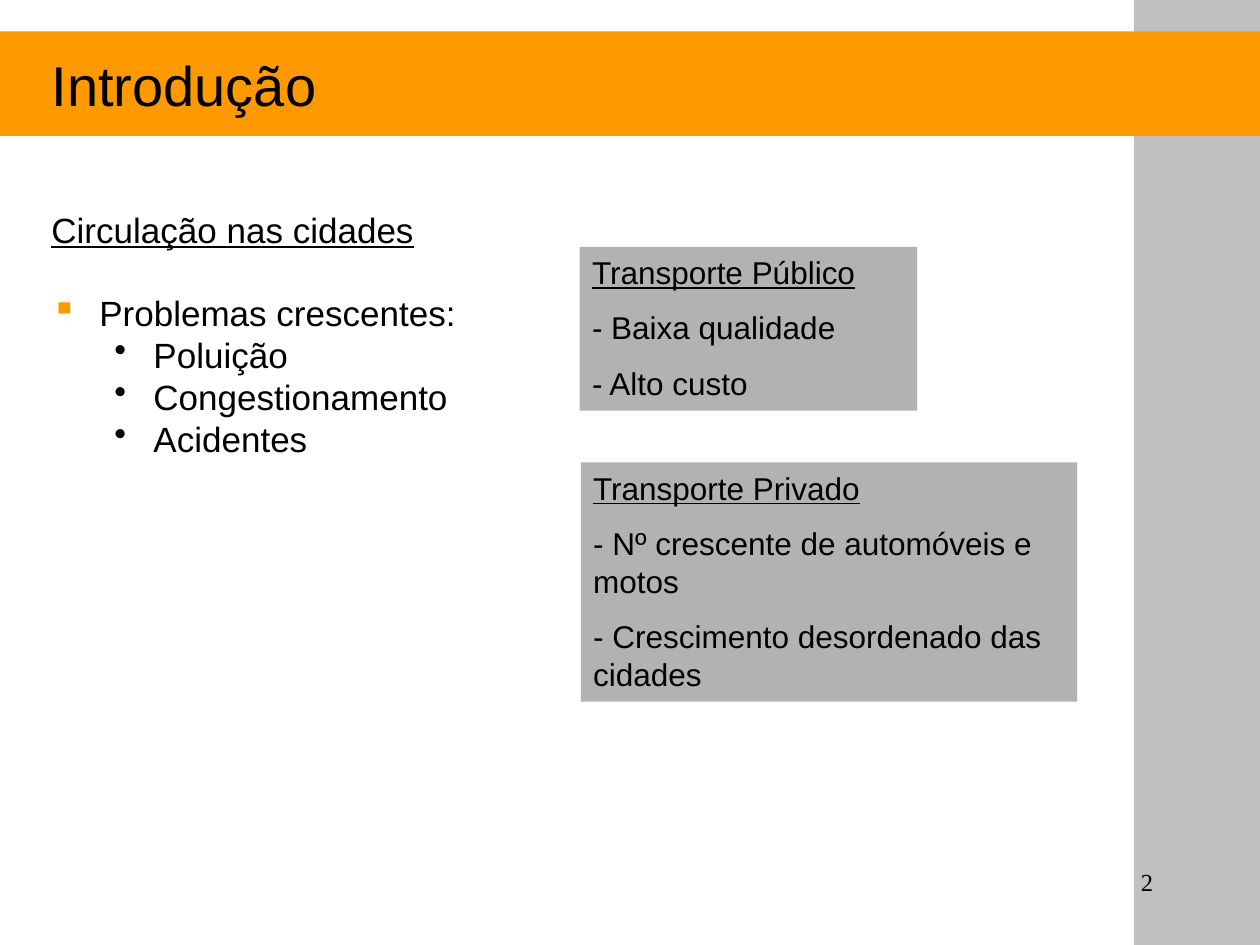
from dataclasses import dataclass

from lxml import etree
from pptx import Presentation
from pptx.dml.color import RGBColor
from pptx.enum.shapes import MSO_SHAPE
from pptx.enum.text import MSO_ANCHOR, PP_ALIGN
from pptx.oxml.ns import qn
from pptx.util import Inches, Pt

RECTANGLE = MSO_SHAPE.RECTANGLE
TOP, MIDDLE = MSO_ANCHOR.TOP, MSO_ANCHOR.MIDDLE
LEFT, RIGHT = PP_ALIGN.LEFT, PP_ALIGN.RIGHT
TITLE_ONLY = 5


@dataclass(frozen=True)
class Theme:
    black: str = "000000"
    orange: str = "FF9900"
    sidebar: str = "C0C0C0"
    panel: str = "B2B2B2"
    font: str = "Arial"
    number_font: str = "Times New Roman"
    title_size: int = 32
    body_size: int = 20
    panel_size: int = 18
    number_size: int = 14
    panel_gap: int = 10
    body_gap: float = 4.8
    heading_gap: int = 28
    body_spacing: float = 0.8


THEME = Theme()


def place(element, left, top, width, height):
    element.left, element.top = Inches(left), Inches(top)
    element.width, element.height = Inches(width), Inches(height)


def style(paragraph, size, font=THEME.font, underline=False, align=LEFT):
    paragraph.alignment = align
    for run in paragraph.runs:
        run.font.size = Pt(size)
        run.font.name = font
        run.font.underline = underline
        run.font.color.rgb = RGBColor.from_string(THEME.black)


def add_block(slide, left, top, width, height, color):
    block = slide.shapes.add_shape(
        RECTANGLE, Inches(left), Inches(top), Inches(width), Inches(height))
    block.shadow.inherit = False
    block.fill.solid()
    block.fill.fore_color.rgb = RGBColor.from_string(color)
    block.line.fill.background()
    return block


def add_text_frame(slide, left, top, width, height):
    frame = slide.shapes.add_textbox(
        Inches(left), Inches(top), Inches(width), Inches(height)).text_frame
    frame.word_wrap = True
    return frame


def add_bullet(paragraph, symbol, color, margin, hanging):
    properties = paragraph._p.get_or_add_pPr()
    properties.set("marL", str(Inches(margin)))
    properties.set("indent", str(-Inches(hanging)))
    bullet_color = etree.SubElement(properties, qn("a:buClr"))
    etree.SubElement(bullet_color, qn("a:srgbClr"), val=color)
    etree.SubElement(properties, qn("a:buChar"), char=symbol)


def set_title(slide, text):
    title = slide.shapes.title
    title.element.getparent().append(title.element)
    place(title, 0.31, 0.33, 8.1, 0.67)
    title.text_frame.text = text
    title.text_frame.vertical_anchor = MIDDLE
    style(title.text_frame.paragraphs[0], THEME.title_size)


def add_problems(slide, heading, topic, problems):
    frame = add_text_frame(slide, 0.31, 1.67, 4.2, 2.1)
    frame.text = "\n".join([heading, topic, *problems])
    heading_line, topic_line, *problem_lines = frame.paragraphs
    add_bullet(topic_line, "▪", THEME.orange, 0.38, 0.38)
    topic_line.space_before = Pt(THEME.heading_gap)
    for line in problem_lines:
        line.level = 1
        add_bullet(line, "•", THEME.black, 0.81, 0.31)
        line.space_before = Pt(THEME.body_gap)
    for line in frame.paragraphs:
        line.line_spacing = THEME.body_spacing
        style(line, THEME.body_size, underline=line.text == heading)


def add_panel(slide, left, top, width, height, heading, points):
    frame = add_block(slide, left, top, width, height, THEME.panel).text_frame
    frame.word_wrap = True
    frame.vertical_anchor = TOP
    frame.text = "\n".join([heading, *(f"- {point}" for point in points)])
    for index, line in enumerate(frame.paragraphs):
        if index:
            line.space_before = Pt(THEME.panel_gap)
        style(line, THEME.panel_size, underline=index == 0)


def add_page_number(slide, number):
    frame = add_text_frame(slide, 7.17, 6.83, 2.08, 0.5)
    frame.text = number
    style(frame.paragraphs[0], THEME.number_size, THEME.number_font, align=RIGHT)


def main():
    deck = Presentation()
    deck.slide_width, deck.slide_height = Inches(10), Inches(7.5)
    slide = deck.slides.add_slide(deck.slide_layouts[TITLE_ONLY])

    add_block(slide, 9, 0, 1, 7.5, THEME.sidebar)
    add_block(slide, 0, 0.25, 10, 0.83, THEME.orange)
    add_page_number(slide, "2")
    set_title(slide, "Introdução")
    add_problems(slide, "Circulação nas cidades", "Problemas crescentes:",
                 ["Poluição", "Congestionamento", "Acidentes"])
    add_panel(slide, 4.6, 1.96, 2.68, 1.3, "Transporte Público",
              ["Baixa qualidade", "Alto custo"])
    add_panel(slide, 4.61, 3.67, 3.94, 1.9, "Transporte Privado",
              ["Nº crescente de automóveis e motos",
               "Crescimento desordenado das cidades"])

    deck.save("out.pptx")


if __name__ == "__main__":
    main()
